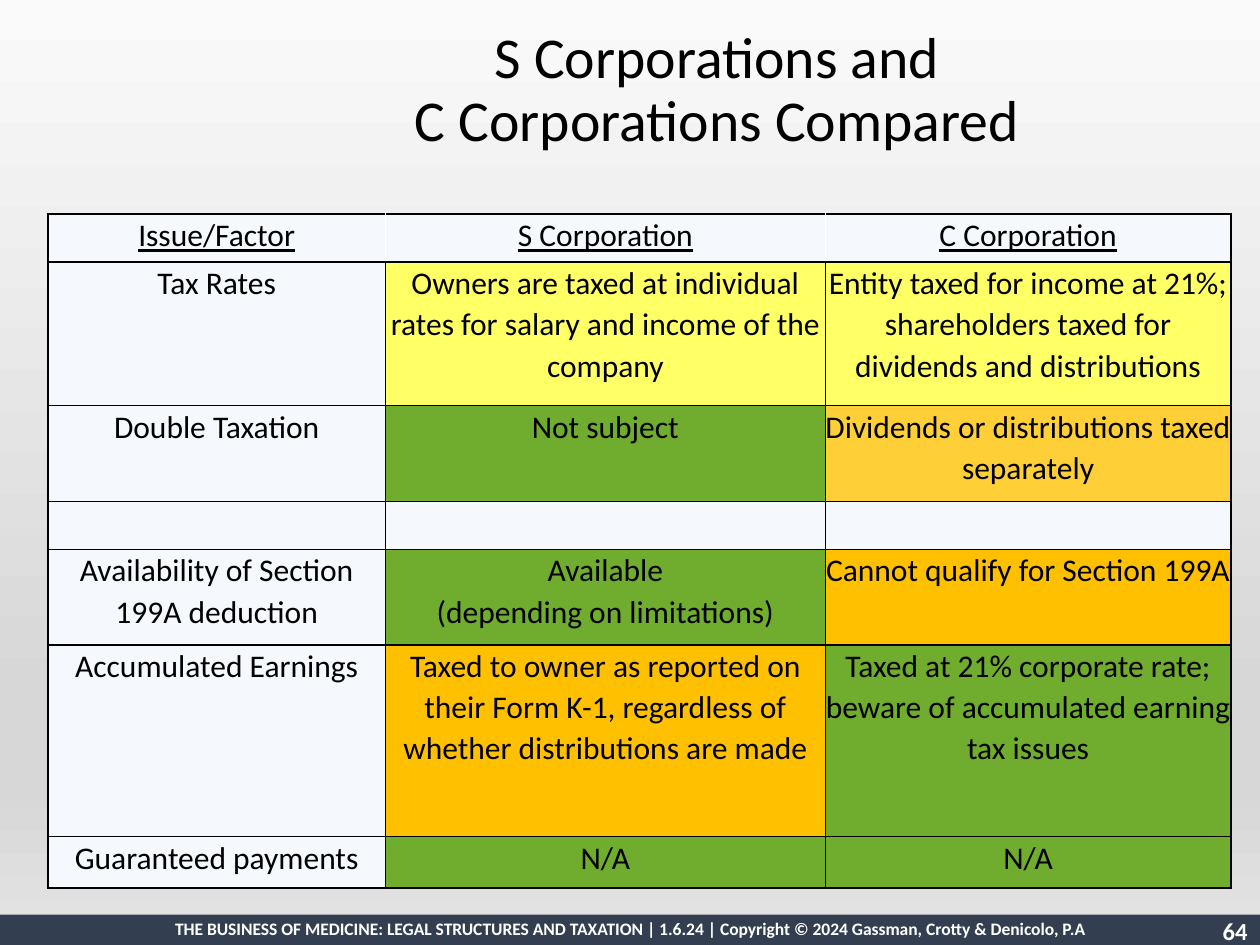
import pptx
import pptx.util
import pptx.oxml
import pptx.oxml.ns
import pptx.dml.color
import pptx.enum.text
import pptx.enum.shapes

Inches = pptx.util.Inches
Pt = pptx.util.Pt
ALIGN = pptx.enum.text.PP_ALIGN
ANCHOR = pptx.enum.text.MSO_ANCHOR

WIDTH, HEIGHT = 10, 7.5
FONT = "Calibri"
COLORS = {
    "black": "000000",
    "white": "FFFFFF",
    "navy": "333F50",
    "pale": "F5F8FD",
    "yellow": "FFFF66",
    "green": "70AC2E",
    "amber": "FFCF37",
    "orange": "FFC000",
}
BACKGROUND_STOPS = [(0, "FAFAFA"), (74, "D7D7D7"), (83, "D7D7D7"), (100, "E4E4E4")]

COLUMN_WIDTHS = [2.68, 3.49, 3.22]
ROW_HEIGHTS = [0.38, 1.14, 0.76, 0.38, 0.76, 1.52, 0.41]
ROWS = [
    [("Issue/Factor", "pale"), ("S Corporation", "pale"), ("C Corporation", "pale")],
    [("Tax Rates", "pale"),
     ("Owners are taxed at individual rates for salary and income of the company", "yellow"),
     ("Entity taxed for income at 21%; shareholders taxed for dividends and distributions",
      "yellow")],
    [("Double Taxation", "pale"), ("Not subject", "green"),
     ("Dividends or distributions taxed separately", "amber")],
    [("", "pale"), ("", "pale"), ("", "pale")],
    [("Availability of Section 199A deduction", "pale"),
     ("Available\n(depending on limitations)", "green"),
     ("Cannot qualify for Section 199A", "orange")],
    [("Accumulated Earnings", "pale"),
     ("Taxed to owner as reported on their Form K-1, regardless of whether distributions are made",
      "orange"),
     ("Taxed at 21% corporate rate; beware of accumulated earning tax issues", "green")],
    [("Guaranteed payments", "pale"), ("N/A", "green"), ("N/A", "green")],
]


def rgb(name):
    return pptx.dml.color.RGBColor.from_string(COLORS[name])


def format_paragraph(paragraph, size, color, align=ALIGN.CENTER, bold=False):
    paragraph.alignment = align
    font = paragraph.font
    font.name, font.size, font.bold = FONT, Pt(size), bold
    font.color.rgb = rgb(color)


def set_background(slide):
    fill = slide.background.fill
    fill.gradient()
    fill.gradient_angle = 270
    stops = slide.element.find(".//" + pptx.oxml.ns.qn("a:gsLst"))
    for stop in list(stops):
        stops.remove(stop)
    for position, color in BACKGROUND_STOPS:
        stops.append(pptx.oxml.parse_xml(
            f'<a:gs {pptx.oxml.ns.nsdecls("a")} pos="{position * 1000}">'
            f'<a:srgbClr val="{color}"/></a:gs>'))


def add_title(slide, text):
    title = slide.shapes.title
    title.left, title.top = Inches(1.38), 0
    title.width, title.height = Inches(WIDTH - 1.38), Inches(1.45)
    frame = title.text_frame
    frame.text = text
    frame.auto_size = pptx.enum.text.MSO_AUTO_SIZE.NONE
    frame.vertical_anchor = ANCHOR.MIDDLE
    paragraph = frame.paragraphs[0]
    paragraph.line_spacing = 0.9
    format_paragraph(paragraph, 33, "black")


def add_label(slide, text, left, top, width, height, size, align):
    box = slide.shapes.add_textbox(Inches(left), Inches(top), Inches(width), Inches(height))
    box.text_frame.word_wrap = True
    box.text_frame.text = text
    format_paragraph(box.text_frame.paragraphs[0], size, "white", align, bold=True)


def add_footer(slide):
    bar = slide.shapes.add_shape(
        pptx.enum.shapes.MSO_SHAPE.RECTANGLE, 0, Inches(7.26), Inches(WIDTH), Inches(0.24))
    bar.shadow.inherit = False
    bar.fill.solid()
    bar.fill.fore_color.rgb = rgb("navy")
    bar.line.fill.background()
    add_label(slide, "64", 8.18, 7.22, 1.82, 0.4, 14, ALIGN.RIGHT)
    add_label(slide, "THE BUSINESS OF MEDICINE: LEGAL STRUCTURES AND TAXATION | 1.6.24 | "
              "Copyright © 2024 Gassman, Crotty & Denicolo, P.A",
              0.7, 7.24, 8.6, 0.27, 10, ALIGN.CENTER)


def set_borders(cell, left, right):
    properties = cell._tc.get_or_add_tcPr()
    sides = {"lnL": left, "lnR": right, "lnT": "black", "lnB": "black"}
    for side, color in sides.items():
        properties.append(pptx.oxml.parse_xml(
            f'<a:{side} {pptx.oxml.ns.nsdecls("a")} w="12700"><a:solidFill>'
            f'<a:srgbClr val="{COLORS[color]}"/></a:solidFill></a:{side}>'))


def fill_cell(cell, text, color, underline):
    cell.margin_left = cell.margin_right = cell.margin_top = cell.margin_bottom = 0
    cell.fill.solid()
    cell.fill.fore_color.rgb = rgb(color)
    cell.text = text
    for paragraph in cell.text_frame.paragraphs:
        paragraph.line_spacing = 1.07
        format_paragraph(paragraph, 18, "black")
        paragraph.font.underline = underline
    paragraph.space_after = Pt(6)


def add_comparison(slide):
    table = slide.shapes.add_table(
        len(ROWS), len(COLUMN_WIDTHS), Inches(0.38), Inches(1.7),
        Inches(sum(COLUMN_WIDTHS)), Inches(sum(ROW_HEIGHTS))).table
    for column, width in zip(table.columns, COLUMN_WIDTHS):
        column.width = Inches(width)
    for row, height in zip(table.rows, ROW_HEIGHTS):
        row.height = Inches(height)
    last = len(COLUMN_WIDTHS) - 1
    for row_index, entries in enumerate(ROWS):
        header = row_index == 0
        inner = "white" if header else "black"
        for column_index, (text, color) in enumerate(entries):
            cell = table.cell(row_index, column_index)
            set_borders(cell, "black" if column_index == 0 else inner,
                        "black" if column_index == last else inner)
            fill_cell(cell, text, color, header)


def main():
    presentation = pptx.Presentation()
    presentation.slide_width = Inches(WIDTH)
    presentation.slide_height = Inches(HEIGHT)
    slide = presentation.slides.add_slide(presentation.slide_layouts[5])
    set_background(slide)
    add_footer(slide)
    add_title(slide, "S Corporations and\vC Corporations Compared")
    add_comparison(slide)
    presentation.save("out.pptx")


if __name__ == "__main__":
    main()
